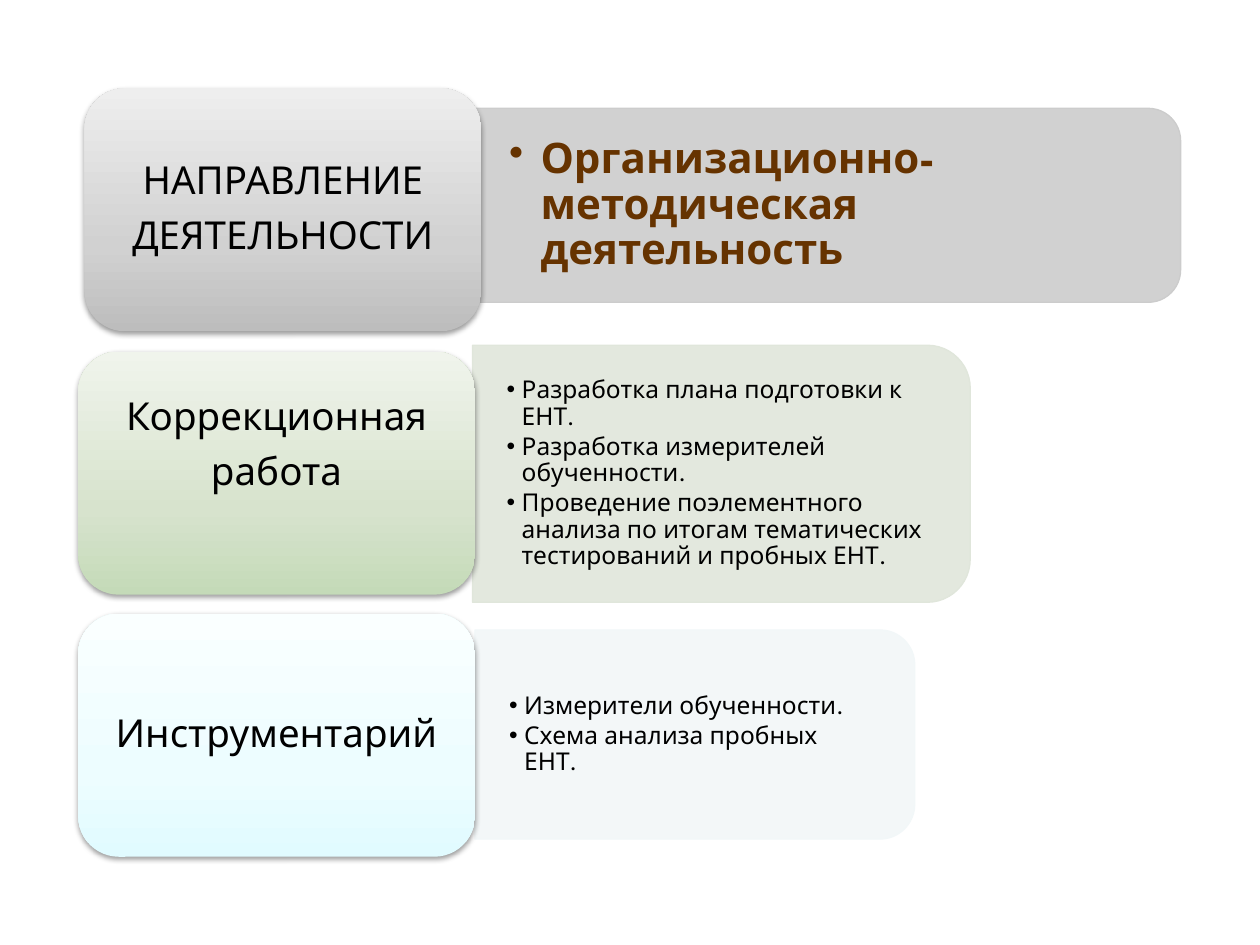
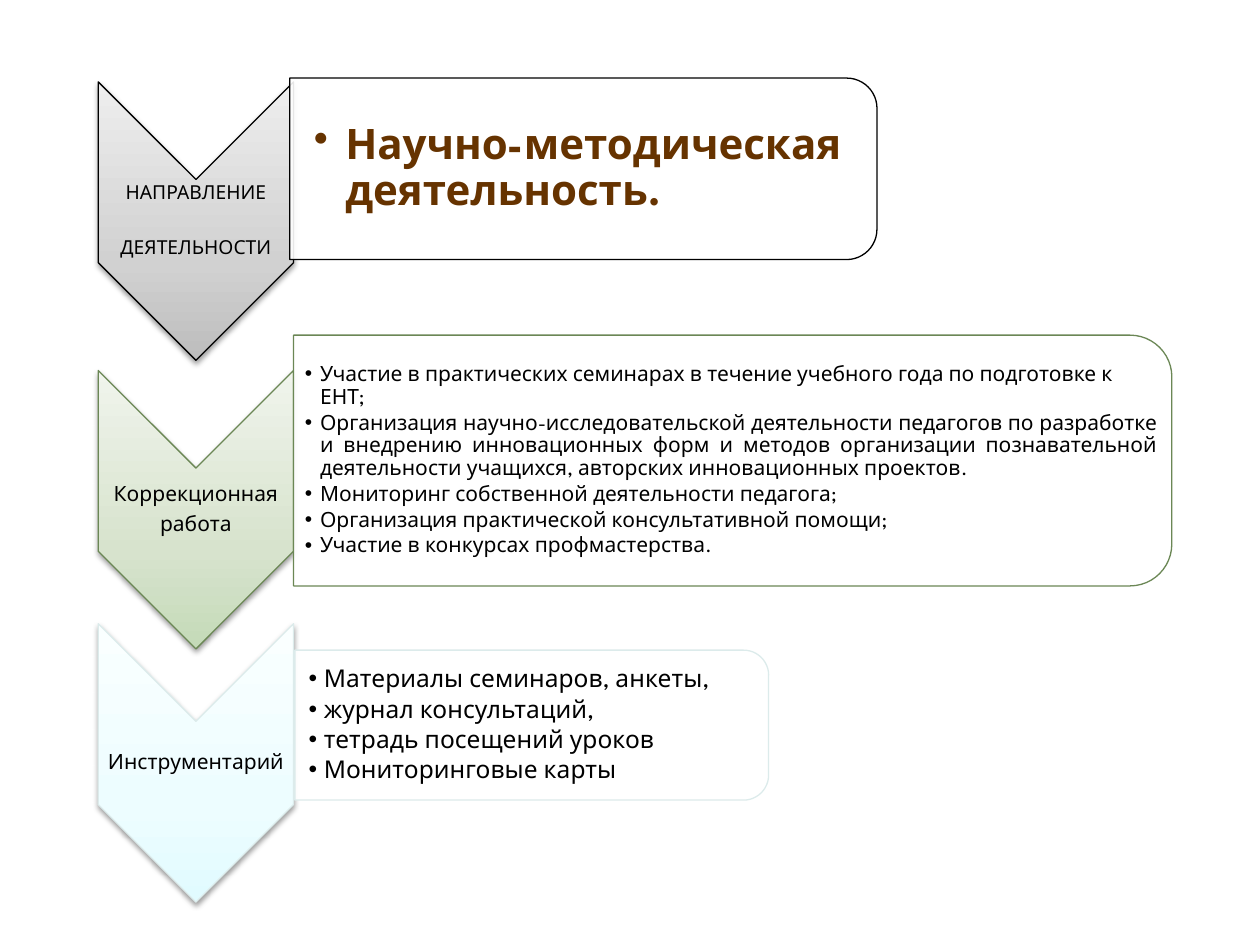
from lxml import etree
from pptx import Presentation
from pptx.dml.color import RGBColor
from pptx.enum.shapes import MSO_SHAPE
from pptx.enum.text import MSO_ANCHOR, MSO_AUTO_SIZE, PP_ALIGN
from pptx.oxml import parse_xml
from pptx.oxml.ns import nsdecls, qn
from pptx.util import Inches, Pt

FONT = "League Spartan"
COLORS = {"text": "000000", "direction": "663300", "white": "FFFFFF"}
# Each theme: badge gradient from bottom to top, filled panel, outline
THEMES = {
    "direction": {"badge": ("BDBDBD", "D1D1D1", "EEEEEE"), "panel": "CCCCCC", "outline": "000000"},
    "work": {"badge": ("C4DAB8", "D7E3CD", "F0F4EC"), "panel": "E0E6DB", "outline": "6B8755"},
    "tools": {"badge": ("E1FBFF", "EDFDFF", "FAFFFF"), "panel": "F2F7F8", "outline": "DCEBEB"},
}
TOOLS_LABEL = ["Инструментарий"]
WORK_LABEL = ["Коррекционная", "работа"]
DIRECTION_LABEL = ["НАПРАВЛЕНИЕ", "ДЕЯТЕЛЬНОСТИ"]

BOX_SIZE = (3.15, 1.93)
CHEVRON_SIZE = (1.55, 2.21)
CHEVRON_LEFT = 0.78


def place(target, left, top, width, height):
    frame = {"left": left, "top": top, "width": width, "height": height}
    for side, length in frame.items():
        setattr(target, side, Inches(length))


def add_turned_shape(slide, kind, left, top, width, height):
    """Add a shape turned by 90 degrees that covers the given area."""
    shape = slide.shapes.add_shape(
        kind,
        Inches(left + (width - height) / 2), Inches(top + (height - width) / 2),
        Inches(height), Inches(width))
    shape.rotation = 90
    return shape


def set_outline(shape, color):
    shape.line.color.rgb = RGBColor.from_string(color)
    shape.line.width = Pt(0.75)


def style_badge(shape, gradient, outline=None):
    """Give a badge its vertical gradient, outline and soft shadow."""
    stops = "".join(
        f'<a:gs pos="{position}"><a:srgbClr val="{color}"/></a:gs>'
        for position, color in zip((0, 35000, 100000), gradient))
    shape.fill.gradient()
    properties = shape._element.spPr
    properties.replace(properties.find(qn("a:gradFill")), parse_xml(
        f'<a:gradFill {nsdecls("a")} rotWithShape="0"><a:gsLst>{stops}</a:gsLst>'
        '<a:lin ang="16200000" scaled="0"/></a:gradFill>'))
    if outline:
        set_outline(shape, outline)
    else:
        shape.line.fill.background()
    shape.shadow.inherit = False
    properties.find(qn("a:effectLst")).append(parse_xml(
        f'<a:outerShdw {nsdecls("a")} blurRad="40000" dist="20000" dir="5400000"'
        ' rotWithShape="0"><a:srgbClr val="000000"><a:alpha val="38000"/>'
        '</a:srgbClr></a:outerShdw>'))


def add_panel(slide, area, fill, outline):
    panel = add_turned_shape(slide, MSO_SHAPE.ROUND_2_SAME_RECTANGLE, *area)
    panel.fill.solid()
    panel.fill.fore_color.rgb = RGBColor.from_string(fill)
    fill_color = panel._element.spPr.find(qn("a:solidFill")).find(qn("a:srgbClr"))
    etree.SubElement(fill_color, qn("a:alpha")).set("val", "90000")
    set_outline(panel, outline)
    panel.shadow.inherit = False


def prepare_frame(frame, margins):
    settings = {"word_wrap": True, "auto_size": MSO_AUTO_SIZE.NONE,
                "vertical_anchor": MSO_ANCHOR.MIDDLE}
    sides = ("margin_left", "margin_top", "margin_right", "margin_bottom")
    settings.update(zip(sides, map(Inches, margins)))
    for name, value in settings.items():
        setattr(frame, name, value)


def add_paragraph(frame, index, text, size, align, after, color="text", bold=False, hang=None):
    paragraph = frame.paragraphs[0] if index == 0 else frame.add_paragraph()
    if hang:
        properties = paragraph._p.get_or_add_pPr()
        properties.set("marL", str(Inches(hang)))
        properties.set("indent", str(-Inches(hang)))
        etree.SubElement(properties, qn("a:buChar")).set("char", "•")
    layout = {"alignment": align, "line_spacing": 0.9,
              "space_before": Pt(0), "space_after": Pt(after)}
    for name, value in layout.items():
        setattr(paragraph, name, value)
    run = paragraph.add_run()
    run.text = text
    for name, value in {"name": FONT, "size": Pt(size), "bold": bold}.items():
        setattr(run.font, name, value)
    run.font.color.rgb = RGBColor.from_string(COLORS[color])


def add_label(slide, area, lines, size, margins, gap=None):
    """Add centred lines; gap is the space between them in points."""
    frame = slide.shapes.add_textbox(*map(Inches, area)).text_frame
    prepare_frame(frame, margins)
    normal_gap = size * 0.35
    for index, line in enumerate(lines):
        is_last = index == len(lines) - 1
        after = normal_gap if is_last or gap is None else gap
        add_paragraph(frame, index, line, size, PP_ALIGN.CENTER, after)


def fill_panel(slide, placeholder, area, items, size, margins, hang=0.12, justified=(),
               **emphasis):
    """Lay a placeholder over its panel, clear of the rounded corners."""
    left, top, width, height = area
    place(placeholder, left, top + height * 0.05, width - height * 0.05, height * 0.9)
    slide.shapes._spTree.append(placeholder._element)
    frame = placeholder.text_frame
    prepare_frame(frame, margins)
    for index, item in enumerate(items):
        align = PP_ALIGN.JUSTIFY if index in justified else PP_ALIGN.LEFT
        add_paragraph(frame, index, item, size, align, size * 0.15, hang=hang, **emphasis)


def add_box_row(slide, placeholder, theme, corner, label, panel, items, lift=0, **text):
    """Row with a rounded box over the edge of a filled panel."""
    colors = THEMES[theme]
    add_panel(slide, panel, colors["panel"], colors["panel"])
    fill_panel(slide, placeholder, panel, items, margins=(0.27, 0.14, 0.27, 0.14), **text)
    left, top = corner
    width, height = BOX_SIZE
    box = slide.shapes.add_shape(MSO_SHAPE.ROUNDED_RECTANGLE,
                                 *map(Inches, (left, top, width, height)))
    style_badge(box, colors["badge"])
    add_label(slide, (left + 0.1, top + 0.1, width - 0.2, height - 0.2 - lift),
              label, 22, (0.09, 0.05, 0.09, 0.05))


def add_chevron_row(slide, placeholder, theme, top, label, panel, items, inset,
                    label_size=12, label_gap=None, **text):
    """Row with a downward chevron and an outlined panel."""
    colors = THEMES[theme]
    width, height = CHEVRON_SIZE
    chevron = add_turned_shape(slide, MSO_SHAPE.CHEVRON, CHEVRON_LEFT, top, width, height)
    style_badge(chevron, colors["badge"], colors["outline"])
    add_label(slide, (CHEVRON_LEFT, top + width / 2, width, height - width),
              label, label_size, (0.01,) * 4, label_gap)
    add_panel(slide, panel, COLORS["white"], colors["outline"])
    fill_panel(slide, placeholder, panel, items, margins=(inset, 0.01, 0.01, 0.01), **text)


def add_slide(deck):
    """Return a slide with its title and two list placeholders."""
    slide = deck.slides.add_slide(deck.slide_layouts[3])
    return slide, list(slide.placeholders)


def build_organisation_slide(deck, heading):
    slide, (title, work, tools) = add_slide(deck)
    add_box_row(slide, title, "direction", (0.67, 0.7), DIRECTION_LABEL,
                (3.77, 0.86, 5.6, 1.54),
                ["Организационно-методическая деятельность"], **heading)
    add_box_row(slide, work, "work", (0.62, 2.79), WORK_LABEL,
                (3.75, 2.74, 3.95, 2.04),
                ["Разработка плана подготовки к ЕНТ.",
                 "Разработка измерителей обученности.",
                 "Проведение поэлементного анализа по итогам тематических "
                 "тестирований и пробных ЕНТ."], lift=0.44, size=14)
    add_box_row(slide, tools, "tools", (0.62, 4.87), TOOLS_LABEL,
                (3.77, 5.0, 3.49, 1.66),
                ["Измерители обученности.", "Схема анализа пробных ЕНТ."], size=14)


def build_science_slide(deck, heading):
    slide, (title, work, tools) = add_slide(deck)
    add_chevron_row(slide, title, "direction", 0.65, DIRECTION_LABEL,
                    (2.3, 0.62, 4.66, 1.44), ["Научно-методическая деятельность."],
                    inset=0.19, label_size=11, label_gap=19.5, **heading)
    add_chevron_row(slide, work, "work", 2.94, WORK_LABEL, (2.33, 2.66, 6.97, 1.99),
                    ["Участие в практических семинарах в течение учебного года "
                     "по подготовке к ЕНТ;",
                     "Организация научно-исследовательской деятельности педагогов "
                     "по разработке и внедрению инновационных форм и методов организации "
                     "познавательной деятельности учащихся, авторских инновационных проектов.",
                     "Мониторинг собственной деятельности педагога;",
                     "Организация практической консультативной помощи;",
                     "Участие в конкурсах профмастерства."],
                    inset=0.09, size=12, justified=(1,))
    add_chevron_row(slide, tools, "tools", 4.95, TOOLS_LABEL, (2.34, 5.16, 3.76, 1.19),
                    ["Материалы семинаров, анкеты,", "журнал консультаций,",
                     "тетрадь посещений уроков", "Мониторинговые карты"],
                    inset=0.11, size=14)


def main():
    deck = Presentation()
    deck.slide_width, deck.slide_height = Inches(10), Inches(7.5)
    heading = {"size": 24, "hang": 0.25, "color": "direction", "bold": True}
    build_organisation_slide(deck, heading)
    build_science_slide(deck, heading)
    deck.save("out.pptx")


if __name__ == "__main__":
    main()
